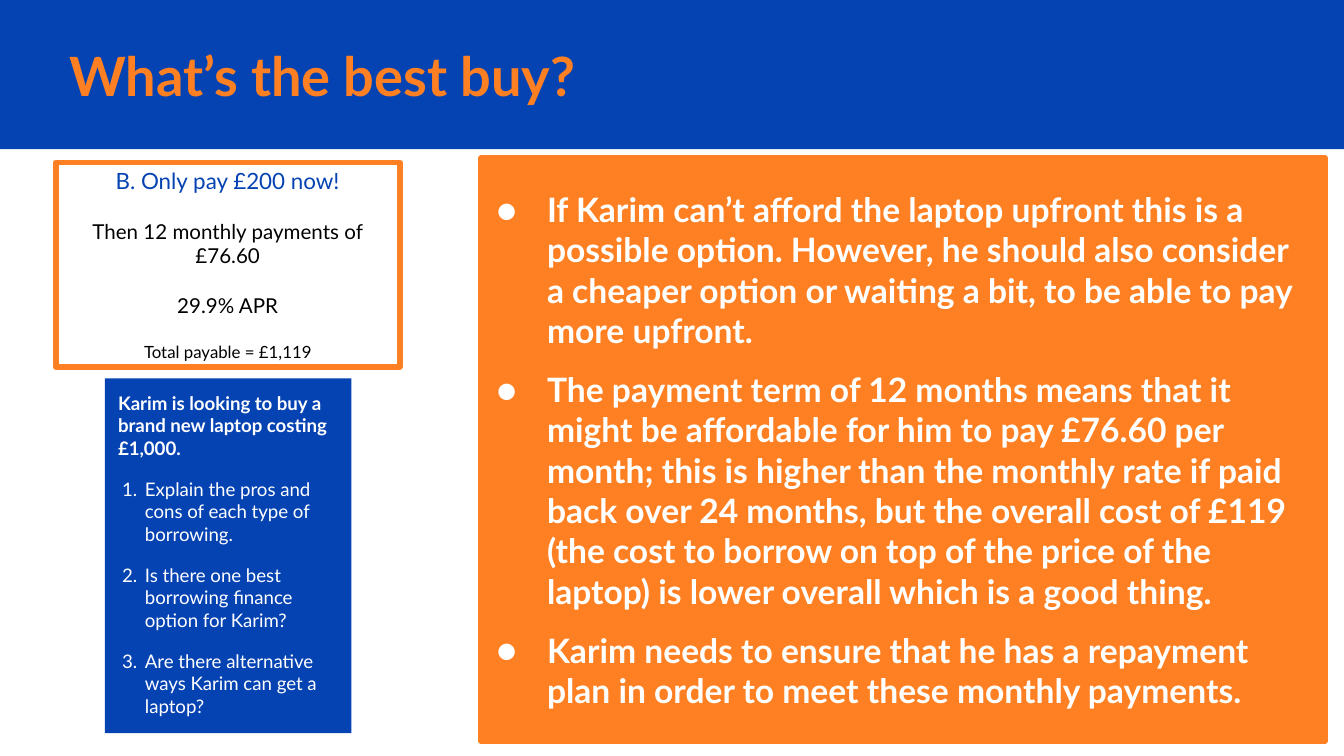
import pptx
import pptx.util
import pptx.dml.color
import pptx.enum.shapes
import pptx.enum.text
import pptx.oxml.ns
from lxml import etree

PX = 4572  # 200 px to the inch
THEME = dict(
    font="Lato", blue="0543B3", orange="FF8022", white="FFFFFF", black="000000",
    title=29, answer=18, offer=12, terms=11, small=9, task=10, line=3, gap=10, inset=20,
)
ALIGN = pptx.enum.text.PP_ALIGN
ANCHOR = pptx.enum.text.MSO_ANCHOR


def style_box(sp, box, fill=None, line=None, anchor=ANCHOR.MIDDLE):
    """Place a shape, paint it and set up its text frame."""
    sp.left, sp.top, sp.width, sp.height = (v * PX for v in box)
    if fill:
        sp.fill.solid()
        sp.fill.fore_color.rgb = pptx.dml.color.RGBColor.from_string(fill)
    if line:
        sp.line.color.rgb = pptx.dml.color.RGBColor.from_string(line)
        sp.line.width = pptx.util.Pt(THEME["line"])
    else:
        sp.line.fill.background()
    tf = sp.text_frame
    tf.word_wrap = True
    tf.auto_size = pptx.enum.text.MSO_AUTO_SIZE.NONE
    tf.vertical_anchor = anchor
    tf.margin_left = tf.margin_right = THEME["inset"] * PX
    tf.margin_top = tf.margin_bottom = THEME["inset"] * PX
    return tf


def add_text(tf, text, size, color, bold=False, align=ALIGN.LEFT, gap=0,
             bullet=None, indent=(0, 0)):
    """Write one paragraph; bullet is a (tag, attribute, value) triple."""
    first = not tf.paragraphs[0].runs
    p = tf.paragraphs[0] if first else tf.add_paragraph()
    p.alignment = align
    p.space_before = pptx.util.Pt(0 if first else gap)
    if bullet:
        tag, attribute, value = bullet
        pPr = p._p.get_or_add_pPr()
        pPr.set("marL", str(indent[0] * PX))
        pPr.set("indent", str(indent[1] * PX))
        buClr = etree.SubElement(pPr, pptx.oxml.ns.qn("a:buClr"))
        etree.SubElement(buClr, pptx.oxml.ns.qn("a:srgbClr"), val=color)
        etree.SubElement(pPr, pptx.oxml.ns.qn("a:buFont"), typeface=THEME["font"])
        etree.SubElement(pPr, pptx.oxml.ns.qn(tag)).set(attribute, value)
    r = p.add_run()
    r.text = text
    r.font.name = THEME["font"]
    r.font.size = pptx.util.Pt(size)
    r.font.bold = bold
    r.font.color.rgb = pptx.dml.color.RGBColor.from_string(color)


prs = pptx.Presentation()
prs.slide_width, prs.slide_height = 2000 * PX, 1125 * PX
s = prs.slides.add_slide(prs.slide_layouts[1])

# Rectangles: banner, offer card, task card
banner, offer, task = (
    s.shapes.add_shape(pptx.enum.shapes.MSO_SHAPE.RECTANGLE, 0, 0, PX, PX)
    for _ in range(3)
)
for sp in (banner, offer, task):
    sp.shadow.inherit = False

# Banner, behind the title
style_box(banner, (0, 0, 2000, 222), THEME["blue"])
s.shapes._spTree.insert(2, banner._element)

# Title
tf = style_box(s.shapes.title, (83, 56, 1566, 112))
add_text(tf, "What’s the best buy?", THEME["title"], THEME["orange"], bold=True)

# Offer card
tf = style_box(offer, (83, 242, 512, 304), THEME["white"], THEME["orange"])
for text, size, color in (
    ("B. Only pay £200 now!", THEME["offer"], THEME["blue"]),
    ("Then 12 monthly payments of £76.60", THEME["terms"], THEME["black"]),
    ("29.9% APR", THEME["terms"], THEME["black"]),
    ("Total payable = £1,119", THEME["small"], THEME["black"]),
):
    add_text(tf, text, size, color, align=ALIGN.CENTER, gap=13.2)

# Task card with numbered questions
tf = style_box(task, (156, 563, 367, 528), THEME["blue"], anchor=ANCHOR.TOP)
add_text(tf, "Karim is looking to buy a brand new laptop costing £1,000.",
         THEME["task"], THEME["white"], bold=True)
for text in (
    "Explain the pros and cons of each type of borrowing.",
    "Is there one best borrowing finance option for Karim?",
    "Are there alternative ways Karim can get a laptop?",
):
    add_text(tf, text, THEME["task"], THEME["white"], gap=THEME["gap"],
             bullet=("a:buAutoNum", "type", "arabicPeriod"), indent=(40, -34))

# Answer panel
tf = style_box(s.placeholders[1], (716, 235, 1256, 868), THEME["orange"], THEME["orange"])
for text in (
    "If Karim can’t afford the laptop upfront this is a possible option. However, "
    "he should also consider a cheaper option or waiting a bit, to be able to pay "
    "more upfront.",
    "The payment term of 12 months means that it might be affordable for him to pay "
    "£76.60 per month; this is higher than the monthly rate if paid back over 24 "
    "months, but the overall cost of £119 (the cost to borrow on top of the price of "
    "the laptop) is lower overall which is a good thing.",
    "Karim needs to ensure that he has a repayment plan in order to meet these "
    "monthly payments.",
):
    add_text(tf, text, THEME["answer"], THEME["white"], bold=True, gap=THEME["gap"],
             bullet=("a:buChar", "char", "●"), indent=(78, -75))

prs.save("out.pptx")
